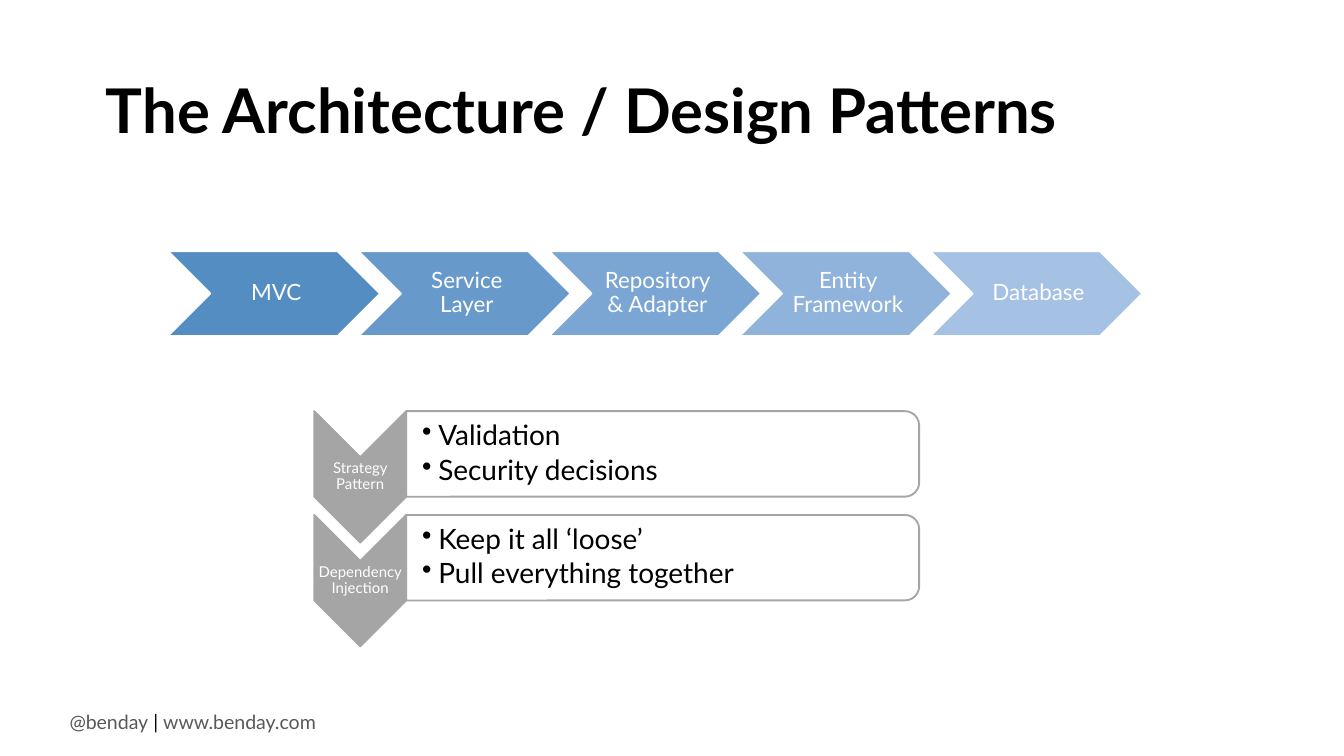
from dataclasses import dataclass

from lxml import etree
from pptx import Presentation
from pptx import util as u
from pptx.dml.color import RGBColor
from pptx.enum import shapes, text
from pptx.oxml.ns import qn

FONT = "Lato"
COLORS = {
    "black": "000000",
    "white": "FFFFFF",
    "footer": "595959",
    "gray": "A5A5A5",
}


@dataclass
class Step:
    label: str
    fill: str


@dataclass
class Pattern:
    label: str
    points: list[str]


@dataclass
class Box:
    left: float
    top: float
    width: float
    height: float

    def lengths(self) -> list[u.Length]:
        return [u.Pt(value) for value in (self.left, self.top, self.width, self.height)]


STEPS = [
    Step("MVC", "538DC1"),
    Step("Service Layer", "6799CA"),
    Step("Repository & Adapter", "7BA6D3"),
    Step("Entity Framework", "90B3DB"),
    Step("Database", "A5C1E3"),
]
PATTERNS = [
    Pattern("Strategy Pattern", ["Validation", "Security decisions"]),
    Pattern("Dependency Injection", ["Keep it all ‘loose’", "Pull everything together"]),
]


def centered_box(center_x: float, center_y: float, width: float, height: float) -> Box:
    return Box(center_x - width / 2, center_y - height / 2, width, height)


def add_text(slide, box: Box, paragraphs: list, *, size: float, color: str = COLORS["black"],
             bold: bool = False, align=text.PP_ALIGN.LEFT, anchor=text.MSO_ANCHOR.MIDDLE,
             insets=(7.2, 3.6, 7.2, 3.6), line_spacing: float = 0.9, space_after: float = 0,
             bullet_indent: float = 0, wrap: bool = True):
    """Each paragraph is a string or a list of (string, color) runs."""
    frame = slide.shapes.add_textbox(*box.lengths()).text_frame
    frame.word_wrap = wrap
    frame.auto_size = text.MSO_AUTO_SIZE.NONE if wrap else text.MSO_AUTO_SIZE.SHAPE_TO_FIT_TEXT
    frame.vertical_anchor = anchor
    (frame.margin_left, frame.margin_top,
     frame.margin_right, frame.margin_bottom) = [u.Pt(inset) for inset in insets]
    for index, content in enumerate(paragraphs):
        paragraph = frame.add_paragraph() if index else frame.paragraphs[0]
        paragraph.alignment = align
        paragraph.line_spacing = line_spacing
        paragraph.space_after = u.Pt(space_after)
        if bullet_indent:
            properties = paragraph._p.get_or_add_pPr()
            properties.set("marL", str(u.Pt(bullet_indent)))
            properties.set("indent", str(-u.Pt(bullet_indent)))
            etree.SubElement(properties, qn("a:buChar"), char="•")
        runs = [(content, color)] if isinstance(content, str) else content
        for words, run_color in runs:
            run = paragraph.add_run()
            run.text = words
            run.font.name = FONT
            run.font.size = u.Pt(size)
            run.font.bold = bold
            run.font.color.rgb = RGBColor.from_string(run_color)


def add_block(slide, kind, box: Box, fill: str, line: str, rotation: float = 0):
    shape = slide.shapes.add_shape(kind, *box.lengths())
    shape.shadow.inherit = False
    shape.rotation = rotation
    shape.fill.solid()
    shape.fill.fore_color.rgb = RGBColor.from_string(fill)
    shape.line.color.rgb = RGBColor.from_string(line)
    shape.line.width = u.Pt(1)
    return shape


def add_step(slide, step: Step, left: float):
    box = Box(left, 134.6, 113.6, 45.4)
    add_block(slide, shapes.MSO_SHAPE.CHEVRON, box, step.fill, COLORS["white"])
    label_box = Box(left + box.height / 2, box.top, box.width - box.height, box.height)
    add_text(slide, label_box, [step.label], size=12, color=COLORS["white"],
             align=text.PP_ALIGN.CENTER, insets=(3.6, 1.2, 1.2, 1.2), space_after=4.2)


def add_pattern(slide, pattern: Pattern, top: float):
    # Downward chevron with its label
    center_x, center_y = 193, top + 35.2
    add_block(slide, shapes.MSO_SHAPE.CHEVRON, centered_box(center_x, center_y, 70.4, 49.2),
              COLORS["gray"], COLORS["gray"], rotation=90)
    add_text(slide, centered_box(center_x, center_y, 49.2, 21), [pattern.label], size=8,
             color=COLORS["white"], align=text.PP_ALIGN.CENTER,
             insets=(0.4, 0.4, 0.4, 0.4), space_after=2.8)

    # Panel rounded on the right, with its bullets
    center_y = top + 22.9
    panel = add_block(slide, shapes.MSO_SHAPE.ROUND_2_SAME_RECTANGLE,
                      centered_box(355, center_y, 45.8, 274.8),
                      COLORS["white"], COLORS["gray"], rotation=90)
    color = panel.fill._xPr.find(qn("a:solidFill"))[0]
    etree.SubElement(color, qn("a:alpha"), val="90000")
    add_text(slide, Box(217.6, center_y - 20.6, 272.4, 41.2), pattern.points, size=15,
             insets=(8.6, 0.7, 0.7, 0.7), space_after=2.25, bullet_indent=8.64)


def main():
    presentation = Presentation()
    presentation.slide_width = u.Pt(720)
    presentation.slide_height = u.Pt(405)
    slide = presentation.slides.add_slide(presentation.slide_layouts[6])

    # Footer and title
    footer = [("@benday", COLORS["footer"]), (" | ", COLORS["black"]),
              ("www.benday.com", COLORS["footer"])]
    add_text(slide, Box(30.2, 376.6, 149.8, 20.2), [footer], size=10.5,
             anchor=text.MSO_ANCHOR.TOP, line_spacing=1, wrap=False)
    add_text(slide, Box(49.7, 21.6, 620.6, 78.5), ["The Architecture / Design Patterns"],
             size=33, bold=True)

    # Layers of the architecture, left to right
    for index, step in enumerate(STEPS):
        add_step(slide, step, left=90 + 102.1 * index)

    # Supporting patterns, top to bottom
    for index, pattern in enumerate(PATTERNS):
        add_pattern(slide, pattern, top=220.3 + 55.6 * index)

    presentation.save("out.pptx")


if __name__ == "__main__":
    main()
